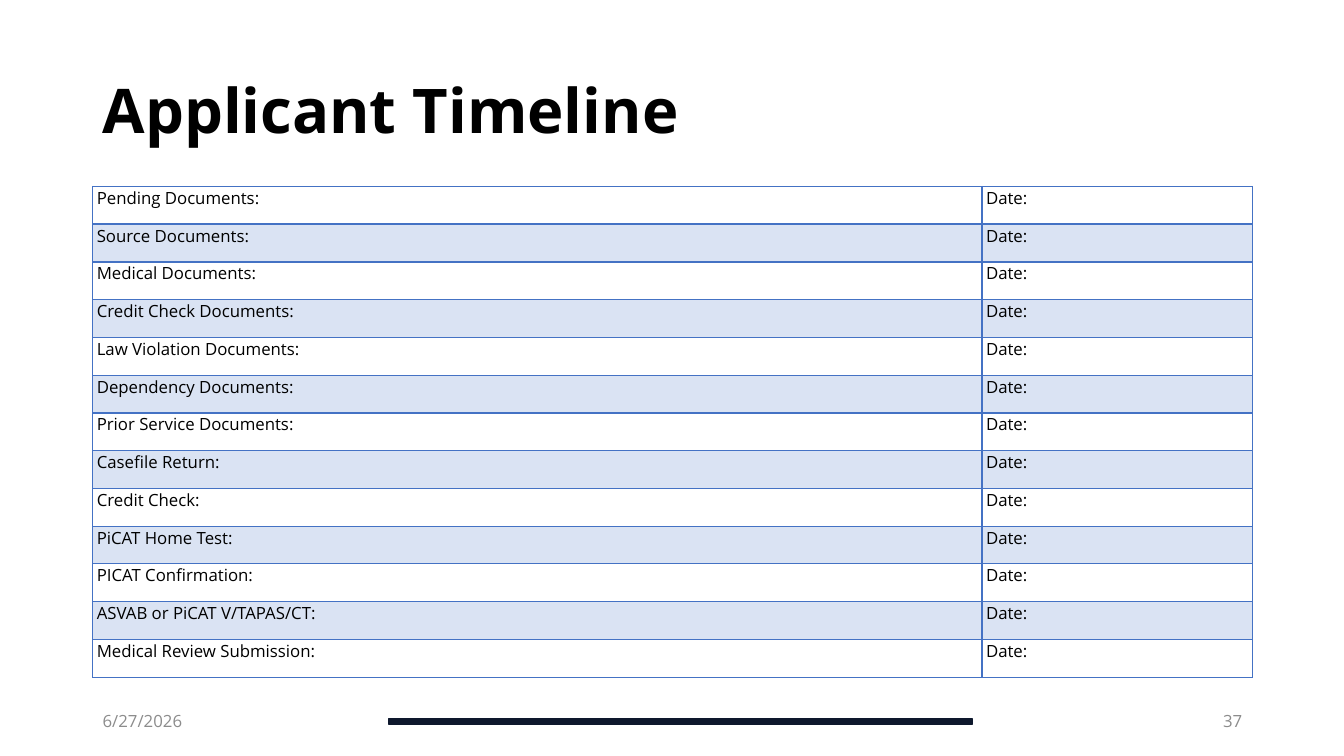
import pptx
import pptx.dml.color
import pptx.enum.shapes
import pptx.enum.text
import pptx.oxml.ns
import pptx.util
from lxml import etree

Inches = pptx.util.Inches
Align = pptx.enum.text.PP_ALIGN

TITLE = "Applicant Timeline"
STEPS = [
    "Pending Documents:",
    "Source Documents:",
    "Medical Documents:",
    "Credit Check Documents:",
    "Law Violation Documents:",
    "Dependency Documents:",
    "Prior Service Documents:",
    "Casefile Return:",
    "Credit Check:",
    "PiCAT Home Test:",
    "PICAT Confirmation:",
    "ASVAB or PiCAT V/TAPAS/CT:",
    "Medical Review Submission:",
]
DATE_LABEL = "Date:"
FOOTER_DATE = "6/27/2026"
PAGE_NUMBER = "37"

FONT = "Open Sans"
COLORS = {
    "text": "000000",
    "footer": "8C8C8C",
    "bar": "0E182D",
    "border": "4472C4",
    "band": "DAE3F3",
}
LEFT, WIDTH = 0.92, 11.5
COLUMN_WIDTHS = [8.82, 2.68]
TABLE_TOP, TABLE_HEIGHT = 1.85, 4.87
FOOTER_TOP, FOOTER_WIDTH, FOOTER_HEIGHT = 6.95, 3, 0.4


def rgb(name):
    return pptx.dml.color.RGBColor.from_string(COLORS[name])


def style(paragraph, size, color, bold=False):
    paragraph.font.name = FONT
    paragraph.font.size = pptx.util.Pt(size)
    paragraph.font.bold = bold
    paragraph.font.color.rgb = rgb(color)


def add_text(slide, text, box, size, color, bold=False, align=Align.LEFT):
    frame = slide.shapes.add_textbox(*map(Inches, box)).text_frame
    frame.word_wrap = True
    frame.vertical_anchor = pptx.enum.text.MSO_ANCHOR.MIDDLE
    paragraph = frame.paragraphs[0]
    paragraph.text = text
    paragraph.alignment = align
    style(paragraph, size, color, bold)
    return paragraph


def add_borders(cell, bottom_width):
    properties = cell._tc.get_or_add_tcPr()
    qn = pptx.oxml.ns.qn
    for side, width in {"L": 1, "R": 1, "T": 1, "B": bottom_width}.items():
        line = etree.SubElement(properties, qn(f"a:ln{side}"), w=str(pptx.util.Pt(width)))
        fill = etree.SubElement(line, qn("a:solidFill"))
        etree.SubElement(fill, qn("a:srgbClr"), val=COLORS["border"])


def add_timeline(slide):
    table = slide.shapes.add_table(
        len(STEPS), len(COLUMN_WIDTHS),
        *map(Inches, (LEFT, TABLE_TOP, WIDTH, TABLE_HEIGHT)),
    ).table
    for column, width in zip(table.columns, COLUMN_WIDTHS):
        column.width = Inches(width)
    for row, step in enumerate(STEPS):
        for column, text in enumerate((step, DATE_LABEL)):
            cell = table.cell(row, column)
            cell.text = text
            cell.margin_left = cell.margin_right = Inches(0.04)
            cell.margin_top = cell.margin_bottom = 0
            style(cell.text_frame.paragraphs[0], 12, "text")
            add_borders(cell, 2 if row == 0 else 1)
            if row % 2:
                cell.fill.solid()
                cell.fill.fore_color.rgb = rgb("band")
            else:
                cell.fill.background()


def add_footer_bar(slide):
    bar = slide.shapes.add_shape(
        pptx.enum.shapes.MSO_SHAPE.RECTANGLE, *map(Inches, (3.86, 7.13, 5.78, 0.06))
    )
    bar.shadow.inherit = False
    bar.fill.solid()
    bar.fill.fore_color.rgb = rgb("bar")
    bar.line.color.rgb = rgb("bar")
    bar.line.width = pptx.util.Pt(1)


def main():
    deck = pptx.Presentation()
    deck.slide_width, deck.slide_height = Inches(13.33), Inches(7.5)
    slide = deck.slides.add_slide(deck.slide_layouts[6])
    add_footer_bar(slide)
    title = add_text(slide, TITLE, (LEFT, 0.4, WIDTH, 1.45), 44, "text", bold=True)
    title.line_spacing = 0.9
    add_timeline(slide)
    page_left = LEFT + WIDTH - FOOTER_WIDTH
    for text, left, align in [
        (FOOTER_DATE, LEFT, Align.LEFT),
        (PAGE_NUMBER, page_left, Align.RIGHT),
    ]:
        box = (left, FOOTER_TOP, FOOTER_WIDTH, FOOTER_HEIGHT)
        add_text(slide, text, box, 12, "footer", align=align)
    deck.save("out.pptx")


if __name__ == "__main__":
    main()
